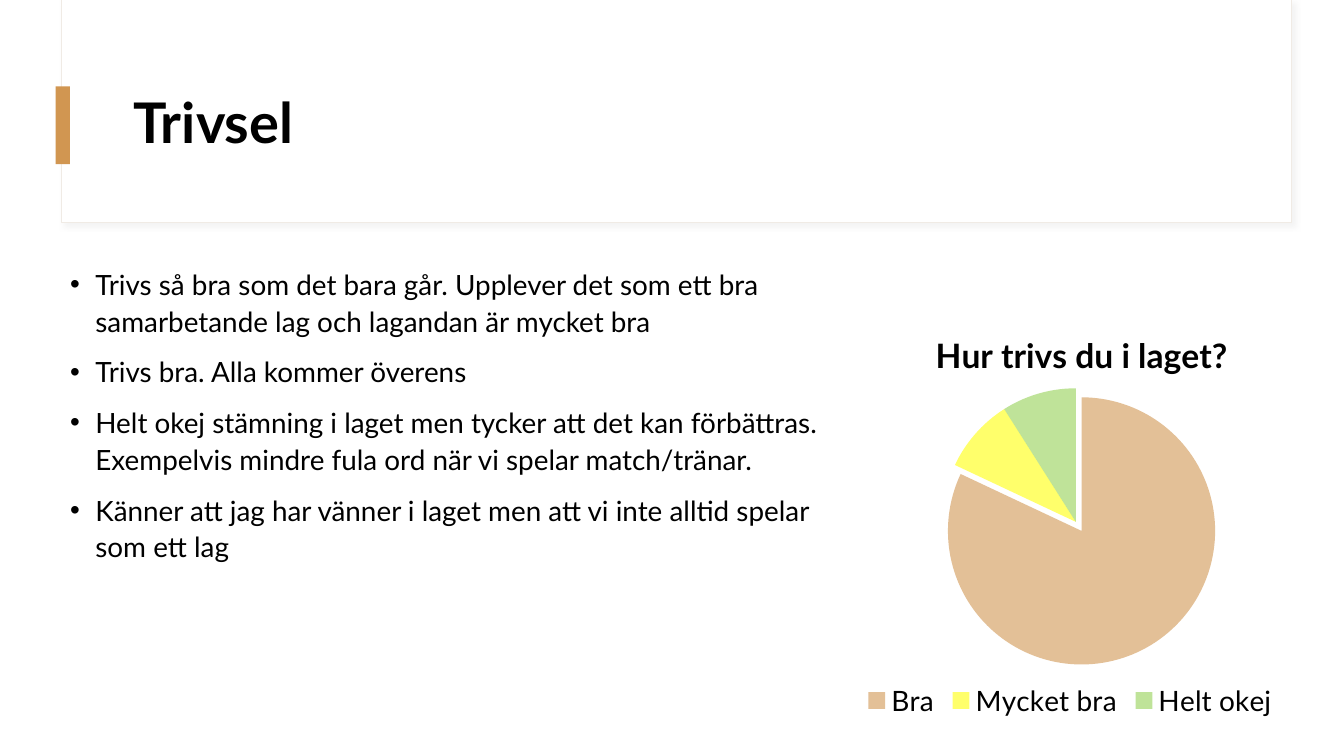
"""Build the slide about how the team members enjoy their team."""
import pptx
import pptx.chart.data
import pptx.dml.color
import pptx.enum.chart
import pptx.enum.shapes
import pptx.enum.text
import pptx.oxml
import pptx.oxml.ns
import pptx.util
from pptx.util import Cm, Pt

TITLE = "Trivsel"
BULLETS = [
    "Trivs så bra som det bara går. Upplever det som ett bra samarbetande lag och lagandan är mycket bra",
    "Trivs bra. Alla kommer överens",
    "Helt okej stämning i laget men tycker att det kan förbättras. "
    "Exempelvis mindre fula ord när vi spelar match/tränar.",
    "Känner att jag har vänner i laget men att vi inte alltid spelar som ett lag",
]
CHART_TITLE = "Hur trivs du i laget?"
ANSWERS = [("Bra", 82, "E3C097", 100), ("Mycket bra", 9, "FFFF00", 58), ("Helt okej", 9, "92D050", 58)]
FONT = "Lato"

HEADER_BOX = (1.55, 0, 31.01, 5.61)
ACCENT_BOX = (1.4, 2.18, 0.36, 1.96)
TITLE_BOX = (3.1, 1.52, 28.24, 3.28)
BODY_BOX = (1.52, 6.53, 19.66, 10.26)
CHART_BOX = (12.22, 7.54, 29.49, 10.69)
PLOT_LAYOUT = {"x": 0.39, "y": 0.21, "w": 0.23, "h": 0.63}
TITLE_LAYOUT = {"x": 0.38, "y": 0.06}
NAMESPACES = pptx.oxml.ns.nsdecls("a", "c")


def color(value):
    return pptx.dml.color.RGBColor.from_string(value)


def lengths(box):
    return [Cm(value) for value in box]


def format_font(font, size, bold=False):
    font.name, font.size, font.bold = FONT, Pt(size), bold
    font.color.rgb = color("000000")


def add_rectangle(slide, box, fill, line=None):
    shape = slide.shapes.add_shape(pptx.enum.shapes.MSO_SHAPE.RECTANGLE, *lengths(box))
    shape.shadow.inherit = False
    shape.fill.solid()
    shape.fill.fore_color.rgb = color(fill)
    if line:
        shape.line.color.rgb = color(line)
        shape.line.width = Pt(0.75)
    else:
        shape.line.fill.background()
    return shape


def add_soft_shadow(shape):
    effects = shape._element.spPr.find(pptx.oxml.ns.qn("a:effectLst"))
    effects.append(pptx.oxml.parse_xml(
        f'<a:outerShdw {NAMESPACES} blurRad="{Pt(4)}" dist="{Pt(3)}" dir="2700000">'
        '<a:srgbClr val="D9D9D9"><a:alpha val="30000"/></a:srgbClr></a:outerShdw>'))


def add_bullet(paragraph):
    properties = paragraph._p.get_or_add_pPr()
    properties.set("marL", str(Cm(0.635)))
    properties.set("indent", str(-Cm(0.635)))
    for xml in ('<a:buFont {} typeface="Arial"/>', '<a:buChar {} char="•"/>'):
        properties.append(pptx.oxml.parse_xml(xml.format(NAMESPACES)))


def manual_layout(positions, inner=False):
    target = '<c:layoutTarget val="inner"/>' if inner else ""
    modes = "".join(f'<c:{key}Mode val="edge"/>' for key in "xy")
    values = "".join(f'<c:{key} val="{value}"/>' for key, value in positions.items())
    return pptx.oxml.parse_xml(
        f"<c:layout {NAMESPACES}><c:manualLayout>{target}{modes}{values}</c:manualLayout></c:layout>")


def set_layout(parent, layout, index):
    for old in parent.findall(pptx.oxml.ns.qn("c:layout")):
        parent.remove(old)
    parent.insert(index, layout)


def add_title(slide):
    title = slide.shapes.title
    title.left, title.top, title.width, title.height = lengths(TITLE_BOX)
    title.text_frame.text = TITLE
    title.text_frame.vertical_anchor = pptx.enum.text.MSO_ANCHOR.MIDDLE
    paragraph = title.text_frame.paragraphs[0]
    paragraph.alignment = pptx.enum.text.PP_ALIGN.LEFT
    paragraph.line_spacing = 0.9
    format_font(paragraph.font, 40, True)
    slide.shapes._spTree.append(title._element)


def add_body(slide):
    frame = slide.shapes.add_textbox(*lengths(BODY_BOX)).text_frame
    frame.word_wrap = True
    frame.text = "\n".join(BULLETS)
    for paragraph in frame.paragraphs:
        paragraph.line_spacing = 1.1
        paragraph.space_before = Pt(10)
        add_bullet(paragraph)
        format_font(paragraph.font, 19.9)


def add_pie(slide):
    data = pptx.chart.data.CategoryChartData()
    data.categories = [answer[0] for answer in ANSWERS]
    data.add_series("Series 1", [answer[1] for answer in ANSWERS])
    chart = slide.shapes.add_chart(
        pptx.enum.chart.XL_CHART_TYPE.PIE, *lengths(CHART_BOX), data).chart
    format_font(chart.font, 20)
    chart.has_title = True
    chart.chart_title.text_frame.text = CHART_TITLE
    format_font(chart.chart_title.text_frame.paragraphs[0].font, 24, True)
    set_layout(chart.chart_title._element, manual_layout(TITLE_LAYOUT), 1)
    set_layout(chart._chartSpace.chart.plotArea, manual_layout(PLOT_LAYOUT, True), 0)
    chart.has_legend = True
    chart.legend.position = pptx.enum.chart.XL_LEGEND_POSITION.BOTTOM
    chart.legend.include_in_layout = False
    format_font(chart.legend.font, 20)

    plot = chart.plots[0]
    plot.vary_by_categories = True
    for index, (_, _, fill, opacity) in enumerate(ANSWERS):
        point = plot.series[0].points[index]
        point.format.fill.solid()
        point.format.fill.fore_color.rgb = color(fill)
        point.format.line.fill.background()
        if opacity < 100:
            srgb = next(point.format.fill._xPr.iter(pptx.oxml.ns.qn("a:srgbClr")))
            srgb.append(pptx.oxml.parse_xml(f'<a:alpha {NAMESPACES} val="{opacity * 1000}"/>'))
    first_point = next(plot.series[0]._element.iter(pptx.oxml.ns.qn("c:dPt")))
    properties = first_point.find(pptx.oxml.ns.qn("c:spPr"))
    properties.addprevious(pptx.oxml.parse_xml(f'<c:explosion {NAMESPACES} val="8"/>'))


def main():
    presentation = pptx.Presentation()
    presentation.slide_width, presentation.slide_height = Cm(33.87), Cm(19.05)
    slide = presentation.slides.add_slide(presentation.slide_layouts[5])
    add_soft_shadow(add_rectangle(slide, HEADER_BOX, "FFFFFF", "F0EBE5"))
    add_rectangle(slide, ACCENT_BOX, "D19651")
    add_title(slide)
    add_body(slide)
    add_pie(slide)
    presentation.save("out.pptx")


if __name__ == "__main__":
    main()
